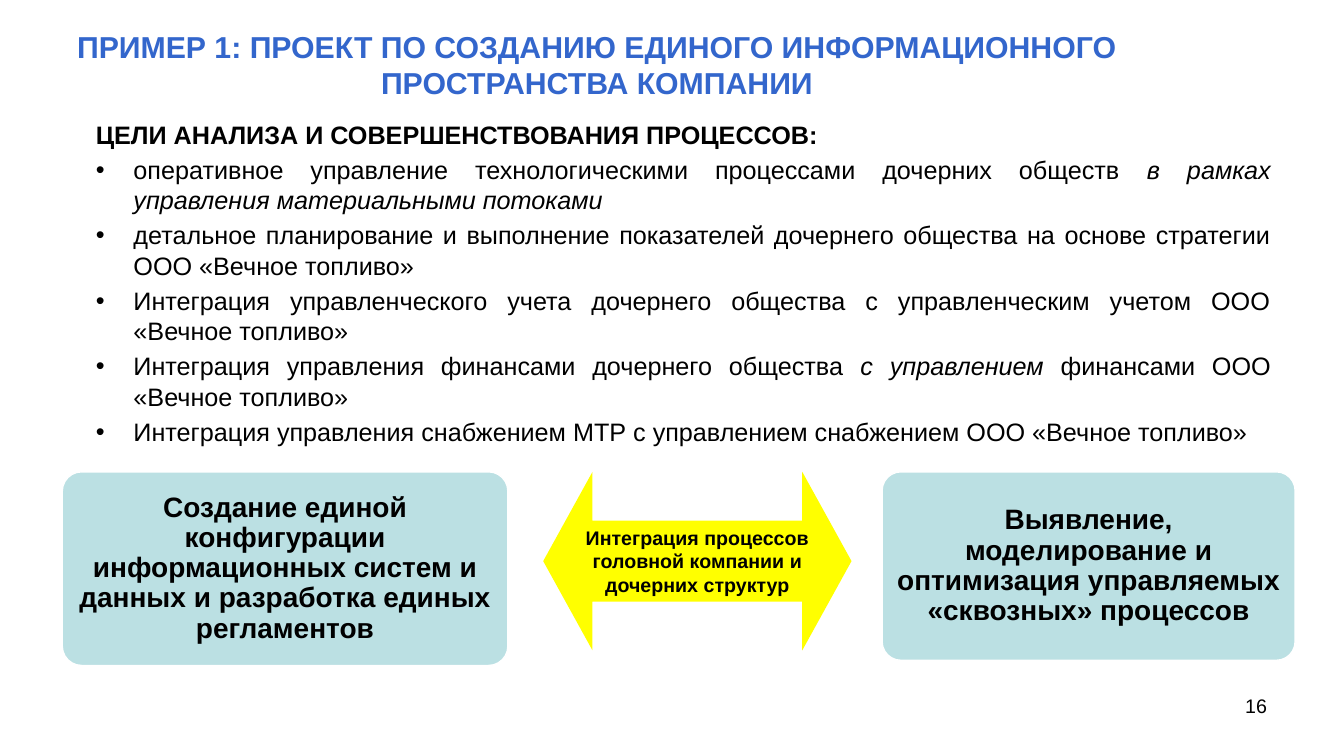
"""Build the slide on creating a single information space for a company."""
from dataclasses import dataclass

from lxml import etree
from pptx import Presentation
from pptx import util as u
from pptx.dml.color import RGBColor
from pptx.enum import shapes, text
from pptx.oxml.ns import qn

TITLE = "ПРИМЕР 1: ПРОЕКТ ПО СОЗДАНИЮ ЕДИНОГО ИНФОРМАЦИОННОГО ПРОСТРАНСТВА КОМПАНИИ"
HEADING = "ЦЕЛИ АНАЛИЗА И СОВЕРШЕНСТВОВАНИЯ ПРОЦЕССОВ:"
GOALS = [
    [("оперативное управление технологическими процессами дочерних обществ ", False),
     ("в рамках управления материальными потоками", True)],
    [("детальное планирование и выполнение показателей дочернего общества "
      "на основе стратегии ООО «Вечное топливо»", False)],
    [("Интеграция управленческого учета дочернего общества "
      "с управленческим учетом ООО «Вечное топливо»", False)],
    [("Интеграция управления финансами дочернего общества ", False),
     ("с управлением ", True),
     ("финансами ООО «Вечное топливо»", False)],
    [("Интеграция управления снабжением МТР с управлением снабжением "
      "ООО «Вечное топливо»", False)],
]
CARDS = [
    ("Создание единой конфигурации информационных систем и данных "
     "и разработка единых регламентов", 1.57, 11.23, 4.88),
    ("Выявление, моделирование и оптимизация управляемых «сквозных» процессов",
     22.23, 10.41, 4.75),
]
ARROW = "Интеграция процессов головной компании и дочерних структур"
PAGE_NUMBER = "16"

DIAGRAM_TOP = 11.89
GOAL_INDENT = u.Cm(0.95)


@dataclass(frozen=True)
class Theme:
    font: str = "Arial"
    ink: str = "000000"
    title: str = "3366CC"
    card: str = "BBE0E3"
    card_line: str = "FFFFFF"
    arrow: str = "FFFF00"
    title_size: float = 21.6
    body_size: float = 18
    card_size: float = 20
    small_size: float = 14


THEME = Theme()


def place(shape, left, top, width, height):
    shape.left, shape.top = u.Cm(left), u.Cm(top)
    shape.width, shape.height = u.Cm(width), u.Cm(height)


def style(paragraph, size, align, bold=False, color=THEME.ink):
    paragraph.alignment = align
    font = paragraph.font
    font.name, font.size, font.bold = THEME.font, u.Pt(size), bold
    font.color.rgb = RGBColor.from_string(color)


def add_title(slide):
    title = slide.shapes.title
    place(title, 1.57, 0.69, 26.95, 1.85)
    frame = title.text_frame
    frame.text = TITLE
    frame.auto_size = text.MSO_AUTO_SIZE.NONE
    frame.vertical_anchor = text.MSO_ANCHOR.MIDDLE
    style(frame.paragraphs[0], THEME.title_size, text.PP_ALIGN.CENTER, True, THEME.title)


def add_goals(slide):
    body = slide.placeholders[1]
    place(body, 2.16, 2.87, 30.12, 8.71)
    frame = body.text_frame
    frame.auto_size = text.MSO_AUTO_SIZE.NONE
    heading = frame.paragraphs[0]
    heading.text = HEADING
    heading.space_before = u.Pt(0)
    properties = heading._p.get_or_add_pPr()
    properties.set("marL", "0")
    properties.set("indent", "0")
    etree.SubElement(properties, qn("a:buNone"))
    style(heading, THEME.body_size, text.PP_ALIGN.JUSTIFY, True)
    for goal in GOALS:
        paragraph = frame.add_paragraph()
        for words, italic in goal:
            run = paragraph.add_run()
            run.text = words
            run.font.italic = italic
        paragraph.space_before = u.Pt(THEME.body_size * 0.2)
        properties = paragraph._p.get_or_add_pPr()
        properties.set("marL", str(GOAL_INDENT))
        properties.set("indent", str(-GOAL_INDENT))
        etree.SubElement(properties, qn("a:buChar"), char="•")
        style(paragraph, THEME.body_size, text.PP_ALIGN.JUSTIFY)


def add_block(slide, kind, words, left, width, height, fill, size, adjustments):
    shape = slide.shapes.add_shape(
        kind, u.Cm(left), u.Cm(DIAGRAM_TOP), u.Cm(width), u.Cm(height))
    shape.shadow.inherit = False
    shape.fill.solid()
    shape.fill.fore_color.rgb = RGBColor.from_string(fill)
    shape.line.fill.background()
    for index, value in enumerate(adjustments):
        shape.adjustments[index] = value
    frame = shape.text_frame
    frame.text = words
    frame.word_wrap = True
    frame.vertical_anchor = text.MSO_ANCHOR.MIDDLE
    style(frame.paragraphs[0], size, text.PP_ALIGN.CENTER, True)
    return shape


def add_diagram(slide):
    for words, left, width, height in CARDS:
        card = add_block(slide, shapes.MSO_SHAPE.ROUNDED_RECTANGLE, words, left, width,
                         height, THEME.card, THEME.card_size, [0.1])
        card.line.color.rgb = RGBColor.from_string(THEME.card_line)
        card.line.width = u.Pt(1)
        frame = card.text_frame
        frame.margin_left = frame.margin_right = u.Cm(0.1)
        frame.paragraphs[0].line_spacing = 0.9
    add_block(slide, shapes.MSO_SHAPE.LEFT_RIGHT_ARROW, ARROW, 13.69, 7.77, 4.5,
              THEME.arrow, THEME.small_size, [0.454, 0.276])


def add_page_number(slide):
    box = slide.shapes.add_textbox(u.Cm(24.28), u.Cm(17.35), u.Cm(7.9), u.Cm(1.32))
    box.text_frame.word_wrap = True
    box.text_frame.text = PAGE_NUMBER
    style(box.text_frame.paragraphs[0], THEME.small_size, text.PP_ALIGN.RIGHT)


def main():
    presentation = Presentation()
    presentation.slide_width, presentation.slide_height = u.Cm(33.87), u.Cm(19.05)
    slide = presentation.slides.add_slide(presentation.slide_layouts[1])
    add_title(slide)
    add_goals(slide)
    add_diagram(slide)
    add_page_number(slide)
    presentation.save("out.pptx")


if __name__ == "__main__":
    main()
